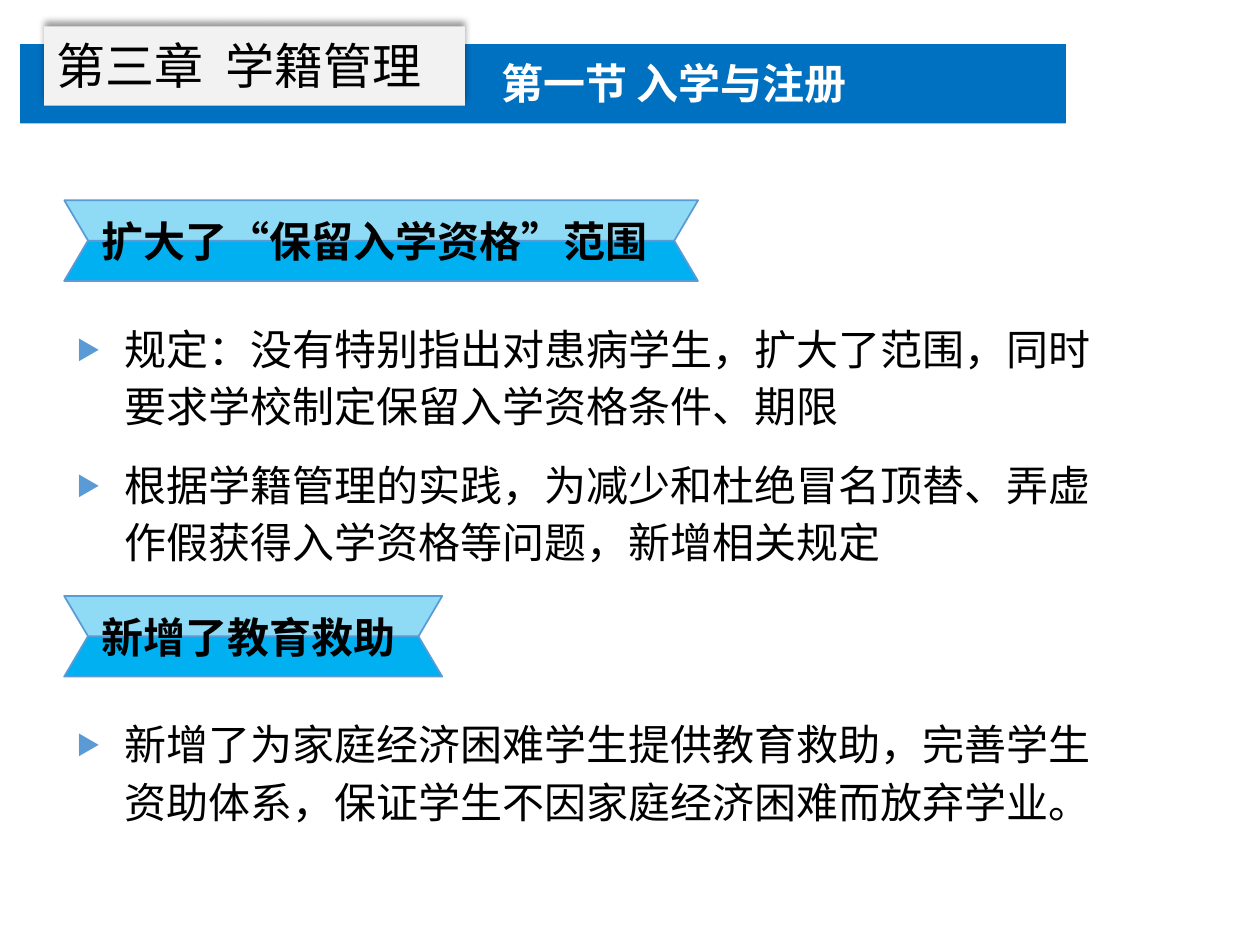
from dataclasses import dataclass

from lxml.etree import SubElement
from pptx import Presentation
from pptx.dml.color import RGBColor
from pptx.enum.shapes import MSO_SHAPE
from pptx.enum.text import MSO_ANCHOR, MSO_AUTO_SIZE, PP_ALIGN
from pptx.oxml.ns import qn
from pptx.util import Inches, Pt


@dataclass(frozen=True)
class Theme:
    font: str = "Noto Sans CJK SC"
    text: str = "000000"
    light_text: str = "FFFFFF"
    bar: str = "0070C0"
    card: str = "F2F2F2"
    accent: str = "5B9BD5"
    ribbon_top: str = "8FDAF4"
    ribbon_bottom: str = "00B0F0"
    title_size: int = 28
    body_size: int = 24


def rgb(value):
    return RGBColor.from_string(value)


def add_text(p, text, *, font, size, color, bold=False):
    r = p.add_run()
    r.text = text
    r.font.size = Pt(size)
    r.font.bold = bold
    r.font.color.rgb = rgb(color)
    r.font.name = font
    SubElement(r.font._element, qn("a:ea"), typeface=font)


def place(sp, left, top, width, height):
    sp.left, sp.top = Inches(left), Inches(top)
    sp.width, sp.height = Inches(width), Inches(height)


class SlideBuilder:
    def __init__(self, slide, theme):
        self.slide = slide
        self.shapes = slide.shapes
        self.theme = theme

    def shape(self, kind, box, fill, line=None, adj=None):
        sp = self.shapes.add_shape(kind, *map(Inches, box))
        sp.shadow.inherit = False
        sp.fill.solid()
        sp.fill.fore_color.rgb = rgb(fill)
        if line:
            sp.line.color.rgb = rgb(line)
            sp.line.width = Pt(1)
        else:
            sp.line.fill.background()
        if adj is not None:
            sp.adjustments[0] = adj
        return sp

    def upward_shadow(self, sp):
        effects = sp._element.spPr.find(qn("a:effectLst"))
        shadow = SubElement(effects, qn("a:outerShdw"), blurRad=str(Pt(4)),
                            dist=str(Pt(3)), dir="16200000", rotWithShape="0")
        color = SubElement(shadow, qn("a:srgbClr"), val="000000")
        SubElement(color, qn("a:alpha"), val="40000")

    def heading(self, text, box, size=None, color=None, bold=True, sp=None):
        """Write one vertically centred line in sp, or in a new text box."""
        if sp is None:
            sp = self.shapes.add_textbox(*map(Inches, box))
        else:
            place(sp, *box)
            self.shapes._spTree.append(sp.element)  # bring to front
        tf = sp.text_frame
        tf.auto_size = MSO_AUTO_SIZE.NONE
        tf.word_wrap = True
        tf.vertical_anchor = MSO_ANCHOR.MIDDLE
        tf.margin_top = tf.margin_bottom = tf.margin_right = 0
        p = tf.paragraphs[0]
        p.alignment = PP_ALIGN.LEFT
        add_text(p, text, font=self.theme.font, bold=bold,
                 size=size or self.theme.body_size,
                 color=color or self.theme.text)

    def bullets(self, items, box, sp=None):
        """Fill sp, or a new text box, with a bulleted list."""
        if sp is None:
            sp = self.shapes.add_textbox(*map(Inches, box))
        else:
            place(sp, *box)
        tf = sp.text_frame
        tf.auto_size = MSO_AUTO_SIZE.NONE
        tf.word_wrap = True
        tf.vertical_anchor = MSO_ANCHOR.TOP
        for i, item in enumerate(items):
            p = tf.add_paragraph() if i else tf.paragraphs[0]
            self.bullet_mark(p)
            p.alignment = PP_ALIGN.LEFT
            p.line_spacing = 1.14
            p.space_before = Pt(6 if i else 0)
            p.space_after = Pt(6)
            add_text(p, item, font=self.theme.font,
                     size=self.theme.body_size, color=self.theme.text)

    def bullet_mark(self, p):
        pPr = p._p.get_or_add_pPr()
        pPr.set("marL", str(Inches(0.38)))
        pPr.set("indent", str(-Inches(0.38)))
        color = SubElement(pPr, qn("a:buClr"))
        SubElement(color, qn("a:srgbClr"), val=self.theme.accent)
        SubElement(pPr, qn("a:buSzPct"), val="58000")
        SubElement(pPr, qn("a:buFont"), typeface=self.theme.font)
        SubElement(pPr, qn("a:buChar"), char="▶")

    def ribbon(self, text, top, width):
        """Draw two mirrored trapezoids with a heading across them."""
        left, half = 0.51, 0.32
        halves = ((top + half, self.theme.ribbon_bottom, 0),
                  (top, self.theme.ribbon_top, 180))
        for y, fill, rotation in halves:
            sp = self.shape(MSO_SHAPE.TRAPEZOID, (left, y, width, half), fill,
                            line=self.theme.accent, adj=0.59)
            sp.rotation = rotation
        self.heading(text, (0.71, top + 0.07, width - 0.43, 0.5))


def main():
    prs = Presentation()
    prs.slide_width, prs.slide_height = Inches(10), Inches(7.5)
    slide = prs.slides.add_slide(prs.slide_layouts[1])
    theme = Theme()
    s = SlideBuilder(slide, theme)
    title, body = slide.shapes.title, slide.placeholders[1]

    s.shape(MSO_SHAPE.ROUNDED_RECTANGLE, (0.16, 0.35, 8.3, 0.63), theme.bar, adj=0)
    card = s.shape(MSO_SHAPE.RECTANGLE, (0.35, 0.21, 3.34, 0.63), theme.card)
    s.upward_shadow(card)
    s.heading("第三章  学籍管理", (0.35, 0.23, 3.34, 0.57),
              size=theme.title_size, bold=False, sp=title)
    s.heading("第一节 入学与注册", (3.88, 0.41, 3.08, 0.5), color=theme.light_text)

    s.ribbon("扩大了“保留入学资格”范围", 1.59, 5.03)
    s.bullets([
        "规定：没有特别指出对患病学生，扩大了范围，同时要求学校制定保留入学资格条件、期限",
        "根据学籍管理的实践，为减少和杜绝冒名顶替、弄虚作假获得入学资格等问题，新增相关规定",
    ], (0.51, 2.46, 8.38, 2.13), sp=body)

    s.ribbon("新增了教育救助", 4.73, 3)
    s.bullets([
        "新增了为家庭经济困难学生提供教育救助，完善学生资助体系，保证学生不因家庭经济困难而放弃学业。",
    ], (0.51, 5.6, 8.38, 1.9))

    prs.save("out.pptx")


if __name__ == "__main__":
    main()
